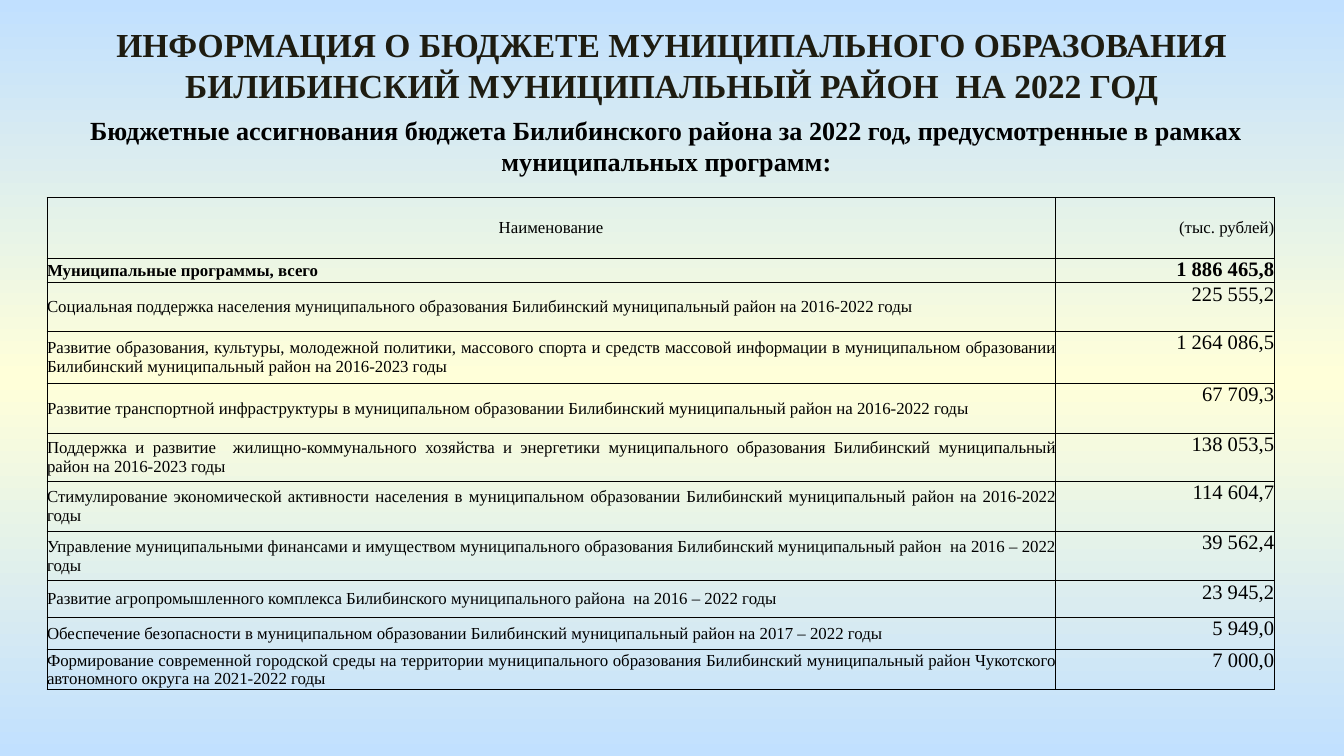
from lxml.etree import SubElement as Sub
from pptx import Presentation
from pptx.dml.color import RGBColor as RGB
from pptx.enum.text import MSO_ANCHOR as Anchor, MSO_AUTO_SIZE as Fit, PP_ALIGN as Align
from pptx.oxml.ns import qn
from pptx.util import Inches, Pt
from copy import deepcopy

BLACK = RGB(0x00, 0x00, 0x00)
DARK = RGB(0x1E, 0x1C, 0x11)
BLUE = RGB(0xC1, 0xE0, 0xFF)
CREAM = RGB(0xFF, 0xFF, 0xD9)
FONT = "Times New Roman"
WIDE = 10
HIGH = WIDE * 9 / 16
COLS = (7.5, 1.63)

TITLE = ("ИНФОРМАЦИЯ О БЮДЖЕТЕ МУНИЦИПАЛЬНОГО ОБРАЗОВАНИЯ "
         "БИЛИБИНСКИЙ МУНИЦИПАЛЬНЫЙ РАЙОН  НА 2022 ГОД")
LEAD = ("Бюджетные ассигнования бюджета Билибинского района за 2022 год, "
        "предусмотренные в рамках муниципальных программ:")
HEAD = ("Наименование", "(тыс. рублей)", 0.45)
TOTAL = ("Муниципальные программы, всего", "1 886 465,8", 0.18)
ITEMS = [
    ("Социальная поддержка населения муниципального образования Билибинский "
     "муниципальный район на 2016-2022 годы", "225 555,2", 0.36),
    ("Развитие образования, культуры, молодежной политики, массового спорта и средств "
     "массовой информации в муниципальном образовании Билибинский муниципальный район "
     "на 2016-2023 годы", "1 264 086,5", 0.39),
    ("Развитие транспортной инфраструктуры в муниципальном образовании Билибинский "
     "муниципальный район на 2016-2022 годы", "67 709,3", 0.37),
    ("Поддержка и развитие  жилищно-коммунального хозяйства и энергетики муниципального "
     "образования Билибинский муниципальный район на 2016-2023 годы", "138 053,5", 0.36),
    ("Стимулирование экономической активности населения в муниципальном образовании "
     "Билибинский муниципальный район на 2016-2022 годы", "114 604,7", 0.37),
    ("Управление муниципальными финансами и имуществом муниципального образования "
     "Билибинский муниципальный район  на 2016 – 2022 годы", "39 562,4", 0.37),
    ("Развитие агропромышленного комплекса Билибинского муниципального района  "
     "на 2016 – 2022 годы", "23 945,2", 0.27),
    ("Обеспечение безопасности в муниципальном образовании Билибинский муниципальный "
     "район на 2017 – 2022 годы", "5 949,0", 0.24),
    ("Формирование современной городской среды на территории муниципального образования "
     "Билибинский муниципальный район Чукотского автономного округа на 2021-2022 годы",
     "7 000,0", 0.24),
]


def write(frame, text, size=9, color=BLACK, bold=False, align=Align.CENTER):
    """Put one formatted paragraph into a text frame."""
    para = frame.paragraphs[0]
    para.alignment = align
    run = para.add_run()
    run.text = text
    font = run.font
    font.name, font.size, font.bold = FONT, Pt(size), bold
    font.color.rgb = color


def place(shape, box):
    """Set a shape to a box given as left, top, width and height."""
    shape.left, shape.top, shape.width, shape.height = map(Inches, box)


def paint(slide):
    """Fill the background with a vertical blue, cream, blue gradient."""
    fill = slide.background.fill
    fill.gradient()
    fill.gradient_angle = 270
    stops = slide.element.find(".//" + qn("a:gsLst"))
    stops.append(deepcopy(stops[0]))
    for stop, pos, color in zip(fill.gradient_stops, (0, 0.5, 1), (BLUE, CREAM, BLUE)):
        stop.position = pos
        stop.color.rgb = color


def label(shape, box, text, **style):
    """Place a wrapped, top-anchored heading in its box."""
    place(shape, box)
    frame = shape.text_frame
    frame.word_wrap = True
    frame.auto_size = Fit.SHAPE_TO_FIT_TEXT
    frame.vertical_anchor = Anchor.TOP
    write(frame, text, bold=True, **style)


def edge(cell):
    """Draw thin black lines on all four sides of a cell."""
    props = cell._tc.get_or_add_tcPr()
    for spot, side in enumerate(("lnL", "lnR", "lnT", "lnB")):
        line = Sub(props, qn("a:" + side), w=str(Pt(0.5)))
        Sub(Sub(line, qn("a:solidFill")), qn("a:srgbClr"), val=str(BLACK))
        props.insert(spot, line)


def grid(slide, box):
    """Build the table of programmes and sums in its box."""
    rows = [HEAD, TOTAL, *ITEMS]
    table = slide.shapes.add_table(len(rows), len(COLS), *map(Inches, box)).table
    table.first_row = table.horz_banding = False
    for col, part in zip(table.columns, COLS):
        col.width = Inches(box[2] * part / sum(COLS))
    for num, (name, total, tall) in enumerate(rows):
        table.rows[num].height = Inches(tall)
        side = (Align.CENTER, Align.LEFT)[num] if num < 2 else Align.JUSTIFY
        looks = ((name, 9, side, Anchor.MIDDLE),
                 (total, 11 if num else 9, Align.RIGHT, Anchor.TOP if num else Anchor.MIDDLE))
        for cell, (text, size, align, anchor) in zip(table.rows[num].cells, looks):
            cell.margin_left = cell.margin_right = cell.margin_top = cell.margin_bottom = 0
            cell.vertical_anchor = anchor
            cell.fill.background()
            edge(cell)
            write(cell.text_frame, text, size=size, bold=num == 1, align=align)


def main():
    """Assemble and save the slide."""
    deck = Presentation()
    deck.slide_width, deck.slide_height = Inches(WIDE), Inches(HIGH)
    slide = deck.slides.add_slide(deck.slide_layouts[5])
    paint(slide)
    left = 0.35
    label(slide.shapes.title, (left, 0.13, WIDE - 2 * left, 0.71),
          TITLE, size=18, color=DARK)
    label(slide.shapes.add_textbox(0, 0, 0, 0), (0.31, 0.8, WIDE * 0.93, 0.57),
          LEAD, size=14)
    grid(slide, (left, 1.47, sum(COLS), HIGH * 0.65))
    deck.save("out.pptx")


if __name__ == "__main__":
    main()
